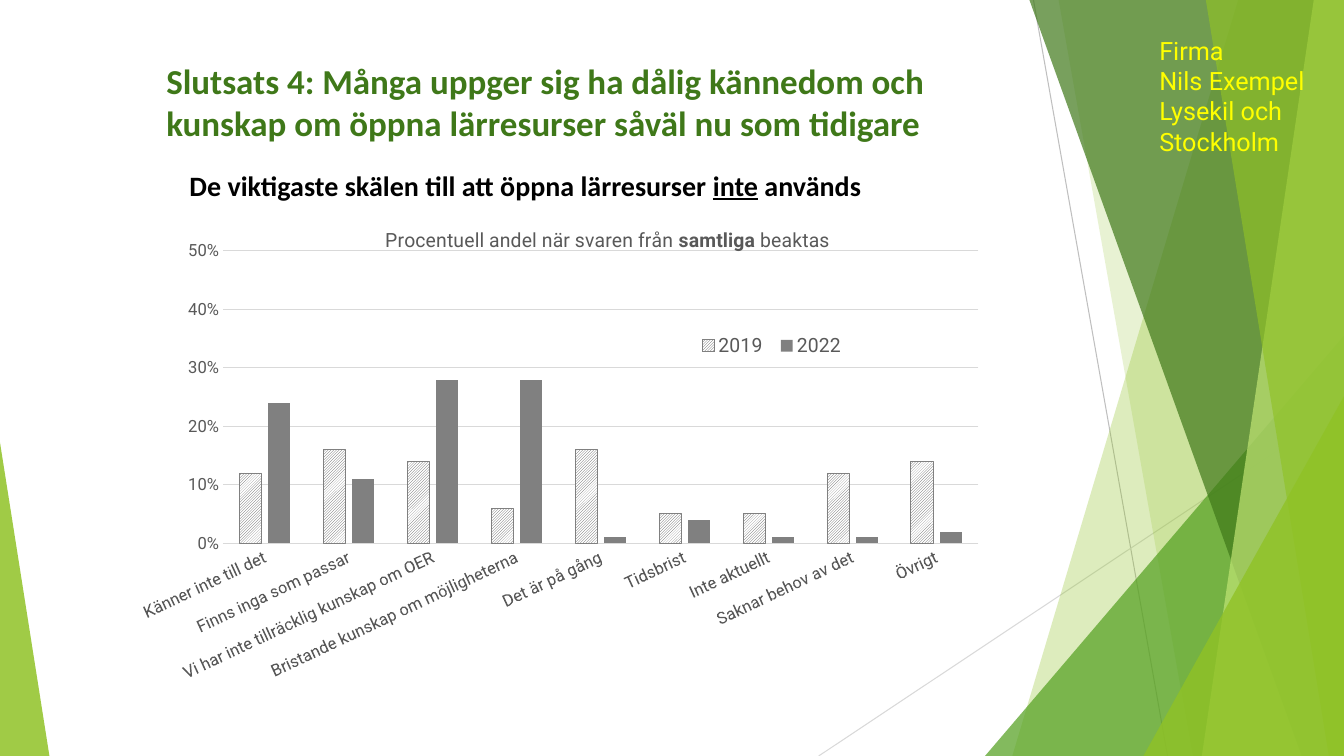
from lxml import etree
from pptx import Presentation
from pptx import util as u
from pptx.chart.data import CategoryChartData
from pptx.dml.color import RGBColor
from pptx.enum import chart as charts, dml, shapes, text
from pptx.oxml.ns import qn

COLORS = {
    "lime": "90C226", "green": "54A021", "forest": "3F7819", "pale": "C0E474",
    "yellow": "FFFF00", "black": "000000", "white": "FFFFFF", "text": "595959",
    "bar": "808080", "grid": "D9D9D9", "ray": "BFBFBF",
}
WIDTH, HEIGHT = 13.33, 7.5
CHART_WIDTH, CHART_HEIGHT = 8.58, 4.9

RAYS = [((10.25, 0), (11.58, HEIGHT), "ray"), ((WIDTH, 4.03), (8.12, HEIGHT), "grid")]
FACETS = [
    ("lime", 30, [(12.28, 0), (WIDTH, 0), (WIDTH, HEIGHT), (10.04, HEIGHT)]),
    ("lime", 20, [(10.5, 0), (WIDTH, 0), (WIDTH, HEIGHT), (11.83, HEIGHT)]),
    ("green", 72, [(WIDTH, 3.33), (WIDTH, HEIGHT), (9.77, HEIGHT)]),
    ("forest", 70, [(10.21, 0), (WIDTH, 0), (WIDTH, HEIGHT), (12.91, HEIGHT)]),
    ("pale", 70, [(13.03, 0), (WIDTH, 0), (WIDTH, HEIGHT), (11.92, HEIGHT)]),
    ("lime", 65, [(11.96, 0), (WIDTH, 0), (WIDTH, HEIGHT), (13.18, HEIGHT)]),
    ("lime", 80, [(WIDTH, 3.93), (WIDTH, HEIGHT), (11.34, HEIGHT)]),
    ("lime", 85, [(0, 4.39), (0.49, HEIGHT), (0, HEIGHT)]),
]

TITLE = "Slutsats 4: Många uppger sig ha dålig kännedom och kunskap om öppna lärresurser såväl nu som tidigare"
SENDER = ["Firma", "Nils Exempel", "Lysekil och", "Stockholm"]
SUBTITLE = ["De viktigaste skälen till att öppna lärresurser ", "inte", " används"]
CHART_TITLE = ["Procentuell andel när svaren från ", "samtliga", " beaktas"]
REASONS = [
    ("Känner inte till det", 0.12, 0.24),
    ("Finns inga som passar", 0.16, 0.11),
    ("Vi har inte tillräcklig kunskap om OER", 0.14, 0.28),
    ("Bristande kunskap om möjligheterna", 0.06, 0.28),
    ("Det är på gång", 0.16, 0.01),
    ("Tidsbrist", 0.05, 0.04),
    ("Inte aktuellt", 0.05, 0.01),
    ("Saknar behov av det", 0.12, 0.01),
    ("Övrigt", 0.14, 0.02),
]


def rgb(name):
    return RGBColor.from_string(COLORS[name])


def style(font, size, face, color, bold=False):
    font.size, font.name, font.bold = u.Pt(size), face, bold
    font.color.rgb = rgb(color)


def outline(line, color):
    line.color.rgb = rgb(color)
    line.width = u.Pt(0.75)


def add_ray(page, start, end, color):
    ray = page.shapes.add_connector(shapes.MSO_CONNECTOR.STRAIGHT, *map(u.Inches, start + end))
    outline(ray.line, color)
    etree.SubElement(ray._element.spPr, qn("a:effectLst"))


def add_facet(page, color, opacity, points):
    corners = [(u.Inches(x), u.Inches(y)) for x, y in points]
    builder = page.shapes.build_freeform(*corners[0])
    builder.add_line_segments(corners[1:], close=True)
    facet = builder.convert_to_shape()
    facet.shadow.inherit = False
    facet.fill.solid()
    facet.fill.fore_color.rgb = rgb(color)
    facet.line.fill.background()
    tint = facet._element.spPr.find(".//" + qn("a:srgbClr"))
    etree.SubElement(tint, qn("a:alpha"), val=str(opacity * 1000))


def add_box(page, left, top, width, height):
    box = page.shapes.add_textbox(*map(u.Inches, (left, top, width, height)))
    box.text_frame.word_wrap = True
    return box.text_frame


def add_spans(para, parts):
    for part in parts:
        span = para.add_run()
        span.text = part
    return para.runs


def set_layout(element, index, inner=False, **lengths):
    layout = element.find(qn("c:layout"))
    if layout is None:
        layout = etree.Element(qn("c:layout"))
        element.insert(index, layout)
    manual = etree.SubElement(layout, qn("c:manualLayout"))
    if inner:
        etree.SubElement(manual, qn("c:layoutTarget"), val="inner")
    for key in ("x", "y"):
        etree.SubElement(manual, qn(f"c:{key}Mode"), val="edge")
    for key, length in lengths.items():
        whole = CHART_WIDTH if key in ("x", "w") else CHART_HEIGHT
        etree.SubElement(manual, qn(f"c:{key}"), val=str(length / whole))


def add_reasons_chart(page):
    data = CategoryChartData(number_format="0%")
    names, before, now = zip(*REASONS)
    data.categories = names
    data.add_series("2019", before)
    data.add_series("2022", now)
    frame = page.shapes.add_chart(
        charts.XL_CHART_TYPE.COLUMN_CLUSTERED,
        *map(u.Inches, (1.39, 2.05, CHART_WIDTH, CHART_HEIGHT)), data)
    chart = frame.chart
    style(chart.font, 10, "Roboto", "black")

    heading = chart.chart_title.text_frame.paragraphs[0]
    style(heading.font, 14, "Roboto", "text")
    add_spans(heading, CHART_TITLE)[1].font.bold = True

    chart.has_legend = True
    chart.legend.position = charts.XL_LEGEND_POSITION.BOTTOM
    chart.legend.include_in_layout = False
    style(chart.legend.font, 14, "Roboto", "text")

    for axis in (chart.category_axis, chart.value_axis):
        axis.major_tick_mark = axis.minor_tick_mark = charts.XL_TICK_MARK.NONE
        style(axis.tick_labels.font, 12, "Roboto", "text")
    outline(chart.category_axis.format.line, "grid")
    label_body = chart.category_axis._element.find(qn("c:txPr")).find(qn("a:bodyPr"))
    label_body.set("rot", str(-25 * 60000))
    scale = chart.value_axis
    scale.minimum_scale, scale.maximum_scale, scale.major_unit = 0, 0.5, 0.1
    scale.tick_labels.number_format = "0%"
    scale.tick_labels.number_format_is_linked = False
    scale.format.line.fill.background()
    outline(scale.major_gridlines.format.line, "grid")

    plot = chart.plots[0]
    plot.gap_width, plot.overlap, plot.vary_by_categories = 150, -30, False
    hatched, solid = plot.series
    fill = hatched.format.fill
    fill.patterned()
    fill.pattern = dml.MSO_PATTERN.LIGHT_UPWARD_DIAGONAL
    fill.fore_color.rgb, fill.back_color.rgb = rgb("text"), rgb("white")
    outline(hatched.format.line, "bar")
    solid.format.fill.solid()
    solid.format.fill.fore_color.rgb = rgb("bar")

    root = chart._chartSpace.find(qn("c:chart"))
    set_layout(root.find(qn("c:title")), 1, x=2.32, y=0.17)
    set_layout(root.find(qn("c:plotArea")), 0, inner=True, x=0.72, y=0.44, w=7.59, h=2.9)
    set_layout(root.find(qn("c:legend")), 1, x=5.42, y=1.18, w=1.63, h=0.4)


def main():
    deck = Presentation()
    deck.slide_width, deck.slide_height = u.Inches(WIDTH), u.Inches(HEIGHT)
    page = deck.slides.add_slide(deck.slide_layouts[5])
    for ray in RAYS:
        add_ray(page, *ray)
    for facet in FACETS:
        add_facet(page, *facet)

    title = page.shapes.title
    page.shapes._spTree.append(title._element)
    title.left, title.top, title.width, title.height = map(u.Inches, (1.55, 0.54, 8.98, 0.92))
    frame = title.text_frame
    frame.text = TITLE
    frame.word_wrap = True
    frame.auto_size = text.MSO_AUTO_SIZE.NONE
    frame.vertical_anchor = text.MSO_ANCHOR.TOP
    frame.margin_right = u.Inches(0.6)
    frame.paragraphs[0].alignment = text.PP_ALIGN.LEFT
    style(frame.paragraphs[0].font, 25, "Calibri", "forest", True)

    sender = add_box(page, 11.4, 0, 1.93, 1.6)
    sender.vertical_anchor = text.MSO_ANCHOR.BOTTOM
    sender.text = "\n".join(SENDER)
    for para in sender.paragraphs:
        style(para.font, 18, "Roboto", "yellow")

    subtitle = add_box(page, 1.78, 1.62, 8.58, 0.44).paragraphs[0]
    style(subtitle.font, 20, "Calibri", "black", True)
    add_spans(subtitle, SUBTITLE)[1].font.underline = True

    add_reasons_chart(page)
    deck.save("out.pptx")


if __name__ == "__main__":
    main()
